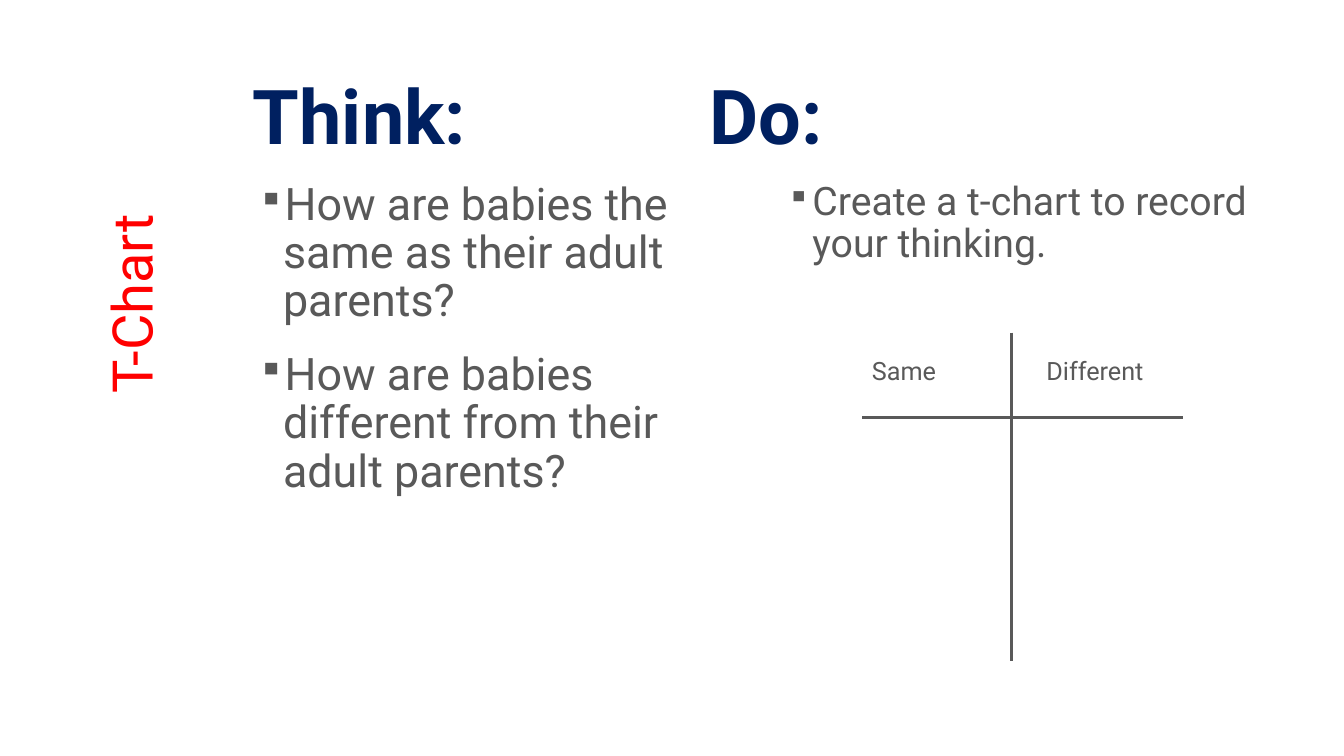
"""Build the T-Chart slide comparing babies with their adult parents."""
import pptx
import pptx.dml.color
import pptx.enum.shapes
import pptx.enum.text
import pptx.oxml.ns
import pptx.util
from lxml import etree

Inches = pptx.util.Inches
Pt = pptx.util.Pt
qn = pptx.oxml.ns.qn
COLORS = {"navy": "002060", "gray": "595959", "red": "FF0000"}


def add_text(box, lines, size, color, bold=False):
    """Fill a text box with one run per paragraph and return the paragraphs."""
    frame = box.text_frame
    frame.word_wrap = True
    for number, line in enumerate(lines):
        paragraph = frame.add_paragraph() if number else frame.paragraphs[0]
        run = paragraph.add_run()
        run.text = line
        run.font.name = "Roboto"
        run.font.size = Pt(size)
        run.font.bold = bold
        run.font.color.rgb = pptx.dml.color.RGBColor.from_string(COLORS[color])
    return frame.paragraphs


presentation = pptx.Presentation()
presentation.slide_width = Inches(13.33)
presentation.slide_height = Inches(7.5)
slide = presentation.slides.add_slide(presentation.slide_layouts[6])
shapes = slide.shapes

title = shapes.add_textbox(Inches(2.41), Inches(0.33), Inches(10.25), Inches(1.31))
title.text_frame.vertical_anchor = pptx.enum.text.MSO_ANCHOR.BOTTOM
heading = add_text(title, ["Think:\tDo:"], 54, "navy", bold=True)[0]
heading.line_spacing = 0.9
tab_list = etree.SubElement(heading._p.get_or_add_pPr(), qn("a:tabLst"))
etree.SubElement(tab_list, qn("a:tab"), pos=str(Inches(4.53)), algn="l")

questions = [
    "How are babies the same as their adult parents?",
    "How are babies different from their adult parents?",
]
tasks = ["Create a t-chart to record your thinking."]
for left, height, lines, size in [(2.41, 4.5, questions, 32), (7.66, 1.43, tasks, 28)]:
    body = shapes.add_textbox(Inches(left), Inches(1.75), Inches(5), Inches(height))
    for paragraph in add_text(body, lines, size, "gray"):
        paragraph.line_spacing = 0.9
        paragraph.space_before = Pt(18)
        properties = paragraph._p.get_or_add_pPr()
        properties.set("marL", str(Inches(0.3)))
        properties.set("indent", str(Inches(-0.25)))
        etree.SubElement(properties, qn("a:buSzPct"), val="80000")
        etree.SubElement(properties, qn("a:buChar"), char="▪")

for start_x, start_y, end_x, end_y in [(8.55, 4.14, 11.73, 4.14), (10.03, 3.3, 10.03, 6.56)]:
    line = shapes.add_connector(
        pptx.enum.shapes.MSO_CONNECTOR.STRAIGHT,
        Inches(start_x), Inches(start_y), Inches(end_x), Inches(end_y),
    )
    line.line.color.rgb = pptx.dml.color.RGBColor.from_string(COLORS["gray"])
    line.line.width = Pt(2.25)
    etree.SubElement(line._element.spPr, qn("a:effectLst"))

for left, label in [(8.55, "Same"), (10.28, "Different")]:
    column = shapes.add_textbox(Inches(left), Inches(3.48), Inches(1.21), Inches(0.4))
    add_text(column, [label], 18, "gray")

side_label = shapes.add_textbox(Inches(-0.35), Inches(2.63), Inches(3.29), Inches(0.77))
side_label.rotation = 270
side_paragraph = add_text(side_label, ["T-Chart"], 40, "red")[0]
side_paragraph.alignment = pptx.enum.text.PP_ALIGN.CENTER

presentation.save("out.pptx")
